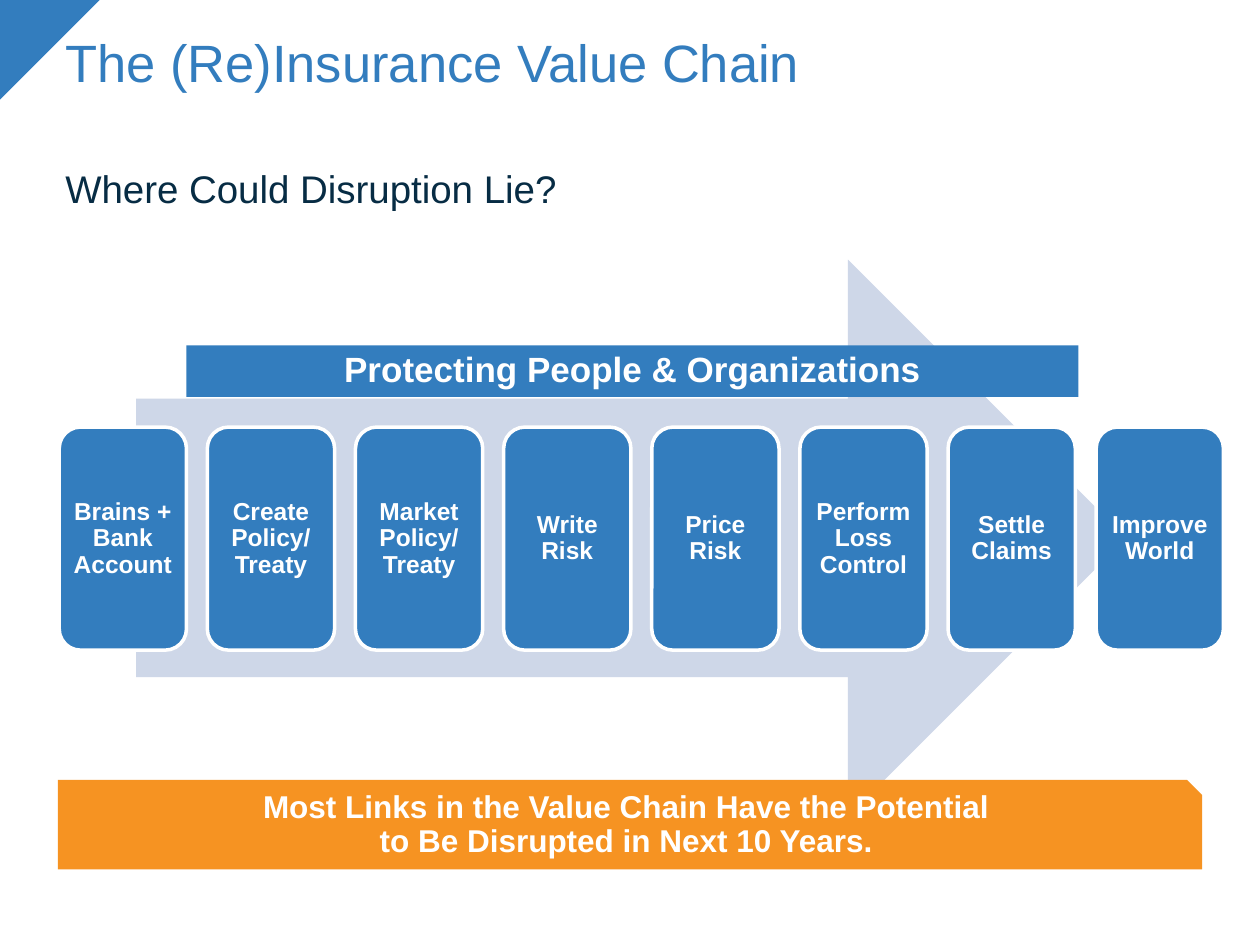
from pptx import Presentation
from pptx.dml.color import RGBColor
from pptx.enum.shapes import MSO_SHAPE
from pptx.enum.text import MSO_ANCHOR, PP_ALIGN
from pptx.util import Inches, Pt

TRIANGLE = MSO_SHAPE.RIGHT_TRIANGLE
ARROW = MSO_SHAPE.RIGHT_ARROW
ROUNDED = MSO_SHAPE.ROUNDED_RECTANGLE
RECT = MSO_SHAPE.RECTANGLE
SNIPPED = MSO_SHAPE.SNIP_1_RECTANGLE
LEFT, CENTER = PP_ALIGN.LEFT, PP_ALIGN.CENTER
TOP, MIDDLE = MSO_ANCHOR.TOP, MSO_ANCHOR.MIDDLE

COLORS = {
    "blue": "337DBE",
    "navy": "072C44",
    "pale": "CED7E8",
    "orange": "F69322",
    "white": "FFFFFF",
}
LINKS = [
    "Brains + Bank Account",
    "Create Policy/ Treaty",
    "Market Policy/ Treaty",
    "Write Risk",
    "Price Risk",
    "Perform Loss Control",
    "Settle Claims",
    "Improve World",
]
FIRST_LEFT, LAST_LEFT = 0.47, 8.7


def rgb(name):
    return RGBColor.from_string(COLORS[name])


def write(sp, lines, size, color, bold=False, align=LEFT, anchor=TOP, inset=(0.1, 0.05, 0.1, 0.05)):
    """Fill a shape with one paragraph per line; inset is left, top, right, bottom."""
    tf = sp.text_frame
    sides = ("margin_left", "margin_top", "margin_right", "margin_bottom")
    frame = {"word_wrap": True, "vertical_anchor": anchor}
    frame.update(zip(sides, map(Inches, inset)))
    for name, value in frame.items():
        setattr(tf, name, value)
    font = {"name": "Arial", "size": Pt(size), "bold": bold}
    for i, line in enumerate(lines):
        p = tf.add_paragraph() if i else tf.paragraphs[0]
        p.alignment, p.line_spacing = align, 0.9
        r = p.add_run()
        r.text = line
        for name, value in font.items():
            setattr(r.font, name, value)
        r.font.color.rgb = rgb(color)


def add_text(s, box, text, size, color):
    sp = s.shapes.add_textbox(*map(Inches, box))
    write(sp, [text], size, color)


def add_block(s, kind, box, fill, line=None):
    sp = s.shapes.add_shape(kind, *map(Inches, box))
    sp.shadow.inherit = False
    sp.fill.solid()
    sp.fill.fore_color.rgb = rgb(fill)
    if line:
        sp.line.color.rgb = rgb(line)
        sp.line.width = Pt(2)
    else:
        sp.line.fill.background()
    return sp


def add_label(s, kind, box, fill, lines, size, line=None, **layout):
    """Add a filled shape with bold white centred text."""
    sp = add_block(s, kind, box, fill, line)
    write(sp, lines, size, "white", bold=True, align=CENTER, anchor=MIDDLE, **layout)


def add_chain(s):
    add_block(s, ARROW, (1.08, 2.06, 7.86, 4.42), "pale")
    pitch = (LAST_LEFT - FIRST_LEFT) / (len(LINKS) - 1)
    for i, link in enumerate(LINKS):
        box = (FIRST_LEFT + i * pitch, 3.39, 1.01, 1.77)
        add_label(s, ROUNDED, box, "blue", [link], 14, line="white", inset=(0.05,) * 4)


def main():
    prs = Presentation()
    prs.slide_width, prs.slide_height = Inches(10), Inches(7.5)
    s = prs.slides.add_slide(prs.slide_layouts[6])

    corner = add_block(s, TRIANGLE, (-0.01, 0, 0.8, 0.8), "blue")
    corner.rotation = 90
    add_text(s, (0.42, 0.25, 9.25, 1.04), "The (Re)Insurance Value Chain", 30, "blue")
    add_text(s, (0.42, 1.3, 9.25, 0.43), "Where Could Disruption Lie?", 22, "navy")
    add_chain(s)
    add_label(s, RECT, (1.48, 2.74, 7.08, 0.41), "blue",
              ["Protecting People & Organizations"], 20)
    add_label(s, SNIPPED, (0.46, 6.19, 9.08, 0.71), "orange",
              ["Most Links in the Value Chain Have the Potential",
               "to Be Disrupted in Next 10 Years."], 18, inset=(0.1, 0.05, 0.1, 0.1))

    prs.save("out.pptx")


if __name__ == "__main__":
    main()
